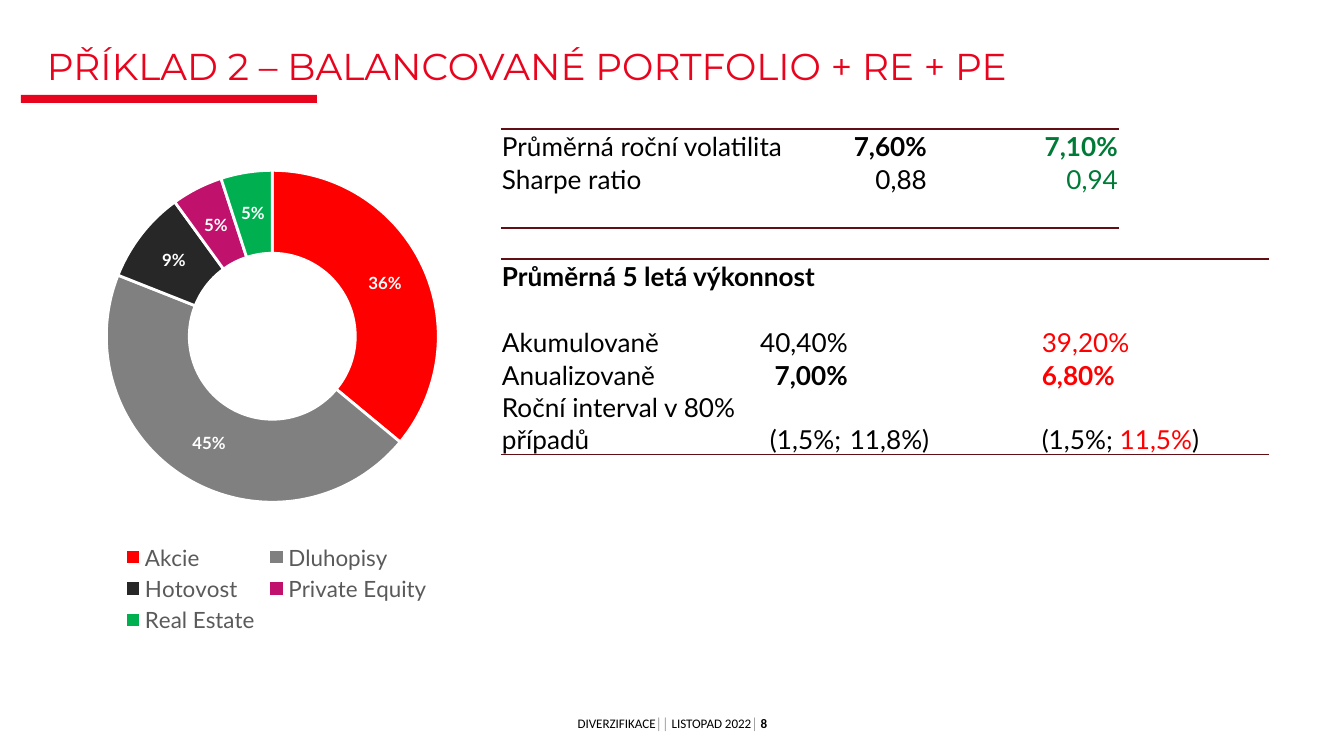
from dataclasses import dataclass

import pptx
import pptx.chart.data
import pptx.dml.color
import pptx.enum.chart
import pptx.enum.shapes
import pptx.enum.text
import pptx.oxml
import pptx.util

PX_PER_INCH = 134.4
NO_STYLE = "{2D5ABB26-0587-4C30-8999-92F81FD0307C}"
DRAWING_NS = 'xmlns:a="http://schemas.openxmlformats.org/drawingml/2006/main"'
CHART_NS = 'xmlns:c="http://schemas.openxmlformats.org/drawingml/2006/chart"'
ALIGN = pptx.enum.text.PP_ALIGN
ANCHOR = pptx.enum.text.MSO_ANCHOR


@dataclass(frozen=True)
class Theme:
    ink: str = "010101"
    accent: str = "E9041E"
    rule: str = "610F15"
    better: str = "007A37"
    worse: str = "FF0000"
    muted: str = "808080"
    legend: str = "5A5A5A"
    white: str = "FFFFFF"
    slices: tuple = ("FF0000", "808080", "272727", "C0126D", "00B050")
    title_font: str = "Montserrat"
    body_font: str = "Lato"
    footer_font: str = "Calibri"
    title_size: int = 20
    table_size: int = 14
    legend_size: int = 12
    chart_size: int = 10
    label_size: int = 9
    footer_size: int = 7


@dataclass(frozen=True)
class Box:
    left: int
    top: int
    width: int
    height: int

    def emu(self):
        return [px(n) for n in (self.left, self.top, self.width, self.height)]


THEME = Theme()


def px(count):
    return pptx.util.Emu(round(count * 914400 / PX_PER_INCH))


def rgb(code):
    return pptx.dml.color.RGBColor.from_string(code)


def apply(target, values):
    for name, value in values.items():
        setattr(target, name, value)


def style_font(font, name, size, color, bold=False):
    apply(font, {"name": name, "size": pptx.util.Pt(size), "bold": bold})
    font.color.rgb = rgb(color)


def add_span(para, text, name, size, color=THEME.ink, bold=False):
    span = para.add_run()
    span.text = text
    style_font(span.font, name, size, color, bold)


def add_text(page, box, wrap, anchor):
    """Add a text box without margins and return its first paragraph."""
    frame = page.shapes.add_textbox(*box.emu()).text_frame
    apply(frame, {"margin_left": 0, "margin_right": 0, "margin_top": 0,
                  "margin_bottom": 0, "word_wrap": wrap, "vertical_anchor": anchor})
    return frame.paragraphs[0]


def add_heading(page, box):
    title_box = Box(box.left + 26, box.top, box.width - 26, 35)
    para = add_text(page, title_box, True, ANCHOR.BOTTOM)
    para.line_spacing = 0.75
    add_span(para, "PŘÍKLAD 2 – BALANCOVANÉ PORTFOLIO + RE + PE",
             THEME.title_font, THEME.title_size, THEME.accent)
    bar_box = Box(box.left, box.top + box.height - 8, 296, 8)
    bar = page.shapes.add_shape(pptx.enum.shapes.MSO_SHAPE.RECTANGLE, *bar_box.emu())
    bar.shadow.inherit = False
    bar.fill.solid()
    bar.fill.fore_color.rgb = rgb(THEME.accent)
    bar.line.fill.background()


def add_footer(page, box):
    para = add_text(page, box, False, ANCHOR.MIDDLE)
    para.alignment = ALIGN.CENTER
    for text, color, bold in (("DIVERZIFIKACE", THEME.ink, False),
                              ("││ ", THEME.muted, False),
                              ("LISTOPAD 2022", THEME.ink, False),
                              ("│ ", THEME.muted, False),
                              ("8", THEME.ink, True)):
        add_span(para, text, THEME.footer_font, THEME.footer_size, color, bold)


def add_border(cell, side):
    line = pptx.oxml.parse_xml(
        f'<a:ln{side} {DRAWING_NS} w="12700"><a:solidFill>'
        f'<a:srgbClr val="{THEME.rule}"/></a:solidFill></a:ln{side}>')
    cell._tc.get_or_add_tcPr().insert(0, line)


def add_ruled_table(page, box, widths, heights, merges, entries):
    """Add a table ruled above and below; entries map (row, column) to
    (alignment, spans), each span being text, colour and boldness."""
    table = page.shapes.add_table(len(heights), len(widths), *box.emu()).table
    apply(table, {"first_row": False, "horz_banding": False})
    table._tbl.tblPr.find(pptx.oxml.ns.qn("a:tableStyleId")).text = NO_STYLE
    for column, width in zip(table.columns, widths):
        column.width = px(width)
    for row, height in zip(table.rows, heights):
        row.height = px(height)
    for row, first, last in merges:
        table.cell(row, first).merge(table.cell(row, last))
    for row in range(len(heights)):
        for column in range(len(widths)):
            cell = table.cell(row, column)
            apply(cell, {"margin_left": px(1), "margin_right": px(1),
                         "margin_top": px(1), "margin_bottom": 0,
                         "vertical_anchor": ANCHOR.BOTTOM})
            if row == 0:
                add_border(cell, "T")
            if row == len(heights) - 1:
                add_border(cell, "B")
            cell.fill.background()
            para = cell.text_frame.paragraphs[0]
            align, spans = entries.get((row, column), (ALIGN.LEFT, ()))
            para.alignment = align
            for text, color, bold in spans:
                add_span(para, text, THEME.body_font, THEME.table_size, color, bold)
            if not spans:
                para._p.get_or_add_endParaRPr().set("sz", "800")


def entry(text, align=ALIGN.LEFT, color=THEME.ink, bold=False):
    return align, ((text, color, bold),)


def add_risk_table(page, box):
    right = ALIGN.RIGHT
    add_ruled_table(
        page, box, (190, 95, 142, 191), [box.height / 3] * 3, [(0, 0, 1)],
        {(0, 0): entry("Průměrná roční volatilita"),
         (0, 2): entry("7,60%", right, bold=True),
         (0, 3): entry("7,10%", right, THEME.better, True),
         (1, 0): entry("Sharpe ratio"),
         (1, 2): entry("0,88", right),
         (1, 3): entry("0,94", right, THEME.better)})


def add_return_table(page, box):
    right = ALIGN.RIGHT
    row = 33
    add_ruled_table(
        page, box, (218, 23, 12, 95, 192, 228), [row] * 4 + [box.height - 4 * row],
        [(0, 0, 3), (4, 0, 2)],
        {(0, 0): entry("Průměrná 5 letá výkonnost", bold=True),
         (2, 0): entry("Akumulovaně"),
         (2, 3): entry("40,40%", right),
         (2, 5): entry("39,20%", color=THEME.worse),
         (3, 0): entry("Anualizovaně"),
         (3, 3): entry("7,00%", right, bold=True),
         (3, 5): entry("6,80%", color=THEME.worse, bold=True),
         (4, 0): entry("Roční interval v 80% případů"),
         (4, 3): entry("(1,5%; ", right),
         (4, 4): entry("11,8%)"),
         (4, 5): (ALIGN.LEFT, (("(1,5%; ", THEME.ink, False),
                               ("11,5%", THEME.worse, False),
                               (")", THEME.ink, False)))})


def set_layout(element, left, top, width, height, inner=False):
    """Place a chart part by fractions of the chart's size."""
    for old in element.findall(pptx.oxml.ns.qn("c:layout")):
        element.remove(old)
    target = '<c:layoutTarget val="inner"/>' if inner else ""
    layout = pptx.oxml.parse_xml(
        f'<c:layout {CHART_NS}><c:manualLayout>{target}'
        f'<c:xMode val="edge"/><c:yMode val="edge"/><c:x val="{left}"/>'
        f'<c:y val="{top}"/><c:w val="{width}"/><c:h val="{height}"/>'
        f'</c:manualLayout></c:layout>')
    element.insert(0 if inner else 1, layout)


def add_allocation_chart(page, box):
    data = pptx.chart.data.CategoryChartData(number_format="0%")
    data.categories = ["Akcie", "Dluhopisy", "Hotovost", "Private Equity", "Real Estate"]
    data.add_series("Series 1", (0.36, 0.45, 0.09, 0.05, 0.05))
    chart = page.shapes.add_chart(
        pptx.enum.chart.XL_CHART_TYPE.DOUGHNUT, *box.emu(), data).chart
    apply(chart, {"has_title": False, "has_legend": True})
    style_font(chart.font, THEME.body_font, THEME.chart_size, THEME.ink)
    apply(chart.legend, {"position": pptx.enum.chart.XL_LEGEND_POSITION.BOTTOM,
                         "include_in_layout": False})
    style_font(chart.legend.font, THEME.body_font, THEME.legend_size, THEME.legend)
    set_layout(chart.legend._element, 0.12, 0.81, 0.76, 0.19)
    plot = chart.plots[0]
    apply(plot, {"vary_by_categories": True, "has_data_labels": True})
    apply(plot.data_labels, {"show_value": True, "show_percentage": False,
                             "number_format": "0%", "number_format_is_linked": False})
    style_font(plot.data_labels.font, THEME.body_font, THEME.label_size, THEME.white, True)
    plot._element.find(pptx.oxml.ns.qn("c:holeSize")).set("val", "75")
    set_layout(plot._element.getparent(), 0.09, 0.06, 0.8, 0.72, inner=True)
    for index, color in enumerate(THEME.slices):
        piece = plot.series[0].points[index].format
        piece.fill.solid()
        piece.fill.fore_color.rgb = rgb(color)
        piece.line.color.rgb = rgb(THEME.white)
        piece.line.width = pptx.util.Pt(1.5)


def main():
    deck = pptx.Presentation()
    apply(deck, {"slide_width": px(1344), "slide_height": px(756)})
    page = deck.slides.add_slide(deck.slide_layouts[6])
    add_footer(page, Box(571, 715, 203, 16))
    add_heading(page, Box(21, 52, 1275, 51))
    add_risk_table(page, Box(501, 129, 618, 99))
    add_return_table(page, Box(501, 259, 768, 194))
    add_allocation_chart(page, Box(69, 118, 415, 520))
    deck.save("out.pptx")


if __name__ == "__main__":
    main()
